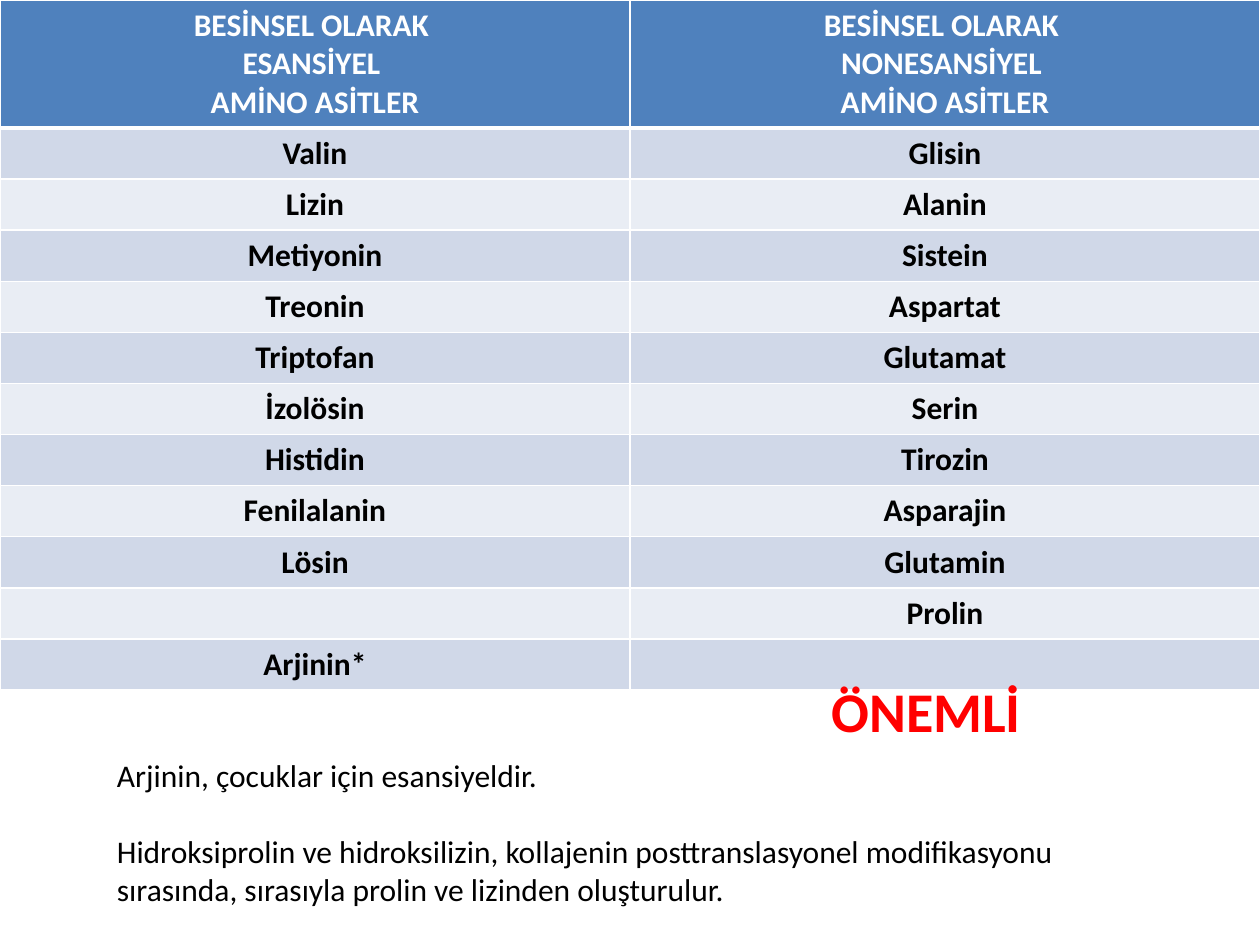
from lxml import etree
from pptx import Presentation
from pptx.dml.color import RGBColor
from pptx.enum.text import PP_ALIGN
from pptx.oxml.ns import qn
from pptx.util import Inches, Pt

CENTER, LEFT = PP_ALIGN.CENTER, PP_ALIGN.LEFT

HEADERS = [
    ["BESİNSEL OLARAK ", "ESANSİYEL ", "AMİNO ASİTLER"],
    ["BESİNSEL OLARAK ", "NONESANSİYEL ", "AMİNO ASİTLER"],
]
AMINO_ACIDS = [
    ("Valin", "Glisin"),
    ("Lizin", "Alanin"),
    ("Metiyonin", "Sistein"),
    ("Treonin", "Aspartat"),
    ("Triptofan", "Glutamat"),
    ("İzolösin", "Serin"),
    ("Histidin", "Tirozin"),
    ("Fenilalanin", "Asparajin"),
    ("Lösin", "Glutamin"),
    ("", "Prolin"),
    ("Arjinin*", ""),
]
NOTES = [
    "Arjinin, çocuklar için esansiyeldir.",
    "Hidroksiprolin ve hidroksilizin, kollajenin posttranslasyonel modifikasyonu "
    "sırasında, sırasıyla prolin ve lizinden oluşturulur.",
]
CALLOUT = "ÖNEMLİ"

THEME = {
    "font": "Calibri", "body": 18, "callout": 32, "note_gap": 22,
    "header": "4F81BD", "bands": ("D0D8E8", "E9EDF4"),
    "white": "FFFFFF", "black": "000000", "red": "FF0000",
}
WIDTH, HEIGHT = 10, 7.5
HEADER_H, ROW_H = 1.0, 0.4


def write(tf, lines, color, size=THEME["body"], bold=False, align=LEFT, gap=0):
    for i, line in enumerate(lines):
        p = tf.paragraphs[0] if i == 0 else tf.add_paragraph()
        p.alignment = align
        if i and gap:
            p.space_before = Pt(gap)
        if not line:
            continue
        r = p.add_run()
        r.text = line
        r.font.name, r.font.size, r.font.bold = THEME["font"], Pt(size), bold
        r.font.color.rgb = RGBColor.from_string(color)


def style_cell(cell, fill, bottom=1):
    """Border the cell in white, then fill it (the schema wants lines first)."""
    tcPr = cell._tc.get_or_add_tcPr()
    for tag, width in (("lnL", 1), ("lnR", 1), ("lnT", 1), ("lnB", bottom)):
        ln = etree.SubElement(tcPr, qn(f"a:{tag}"), w=str(Pt(width)))
        solid = etree.SubElement(ln, qn("a:solidFill"))
        etree.SubElement(solid, qn("a:srgbClr"), val=THEME["white"])
    cell.fill.solid()
    cell.fill.fore_color.rgb = RGBColor.from_string(fill)


def add_amino_table(s):
    rows, cols = len(AMINO_ACIDS) + 1, len(HEADERS)
    height = HEADER_H + ROW_H * len(AMINO_ACIDS)
    table = s.shapes.add_table(rows, cols, 0, 0, Inches(WIDTH), Inches(height)).table
    for col in table.columns:
        col.width = Inches(WIDTH / cols)
    for i, row in enumerate(table.rows):
        row.height = Inches(ROW_H if i else HEADER_H)
    for c, lines in enumerate(HEADERS):
        cell = table.cell(0, c)
        write(cell.text_frame, lines, THEME["white"], bold=True, align=CENTER)
        style_cell(cell, THEME["header"], bottom=3)
    for i, names in enumerate(AMINO_ACIDS):
        for c, name in enumerate(names):
            cell = table.cell(i + 1, c)
            write(cell.text_frame, [name], THEME["black"], bold=True, align=CENTER)
            style_cell(cell, THEME["bands"][i % 2])


def add_text(s, box, lines, color, **style):
    tf = s.shapes.add_textbox(*map(Inches, box)).text_frame
    tf.word_wrap = True
    write(tf, lines, color, **style)


def main():
    prs = Presentation()
    prs.slide_width, prs.slide_height = Inches(WIDTH), Inches(HEIGHT)
    s = prs.slides.add_slide(prs.slide_layouts[6])
    add_amino_table(s)
    add_text(s, (0.83, 5.95, 0.85 * WIDTH, 1.31), NOTES, THEME["black"],
             gap=THEME["note_gap"])
    add_text(s, (0.65 * WIDTH, 5.32, 0.35 * WIDTH, 0.94), [CALLOUT], THEME["red"],
             size=THEME["callout"], bold=True)
    prs.save("out.pptx")


if __name__ == "__main__":
    main()
